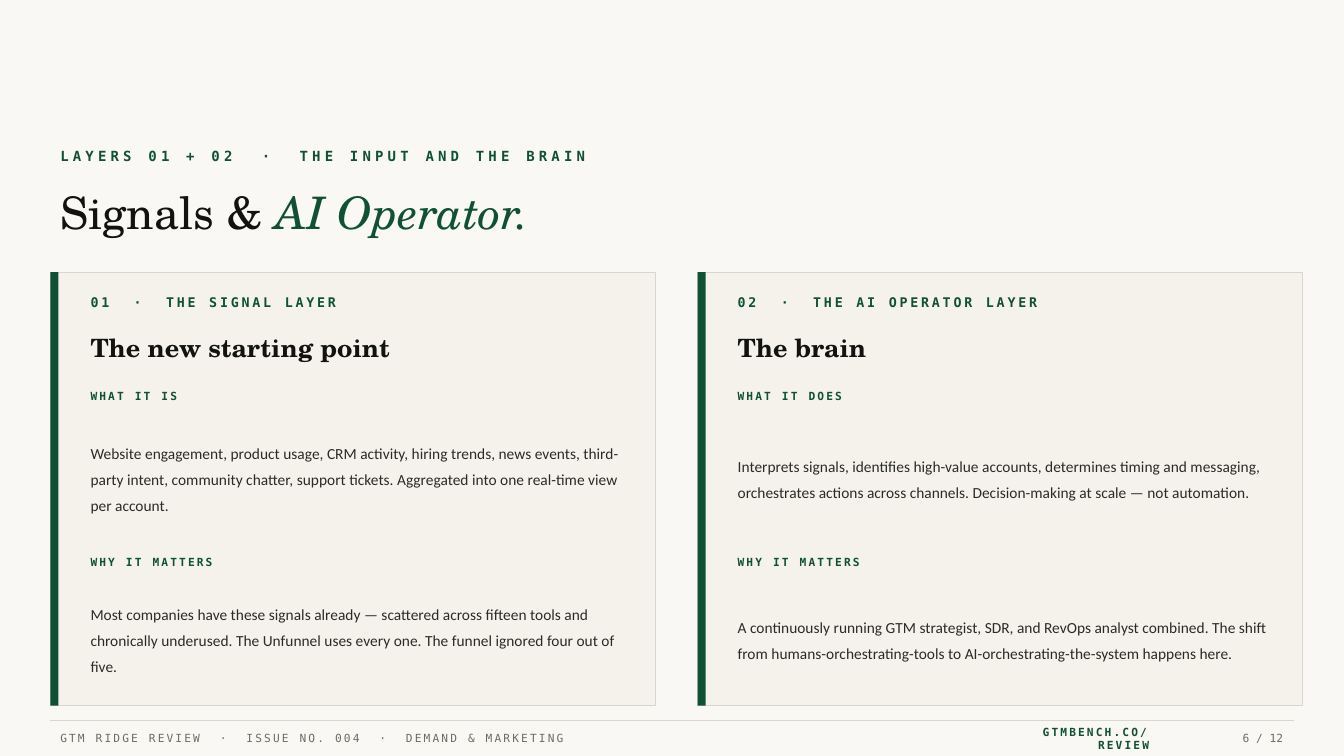
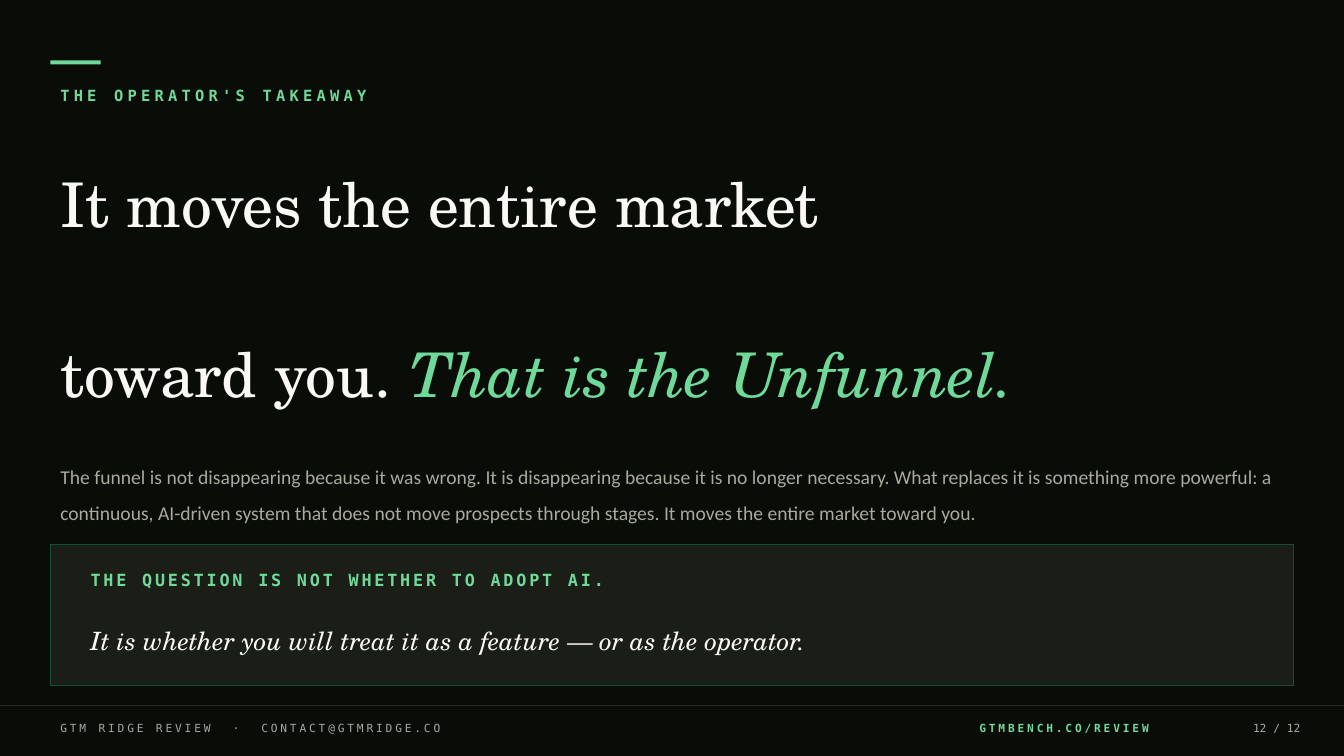
import pptx
import pptx.dml.color
import pptx.enum.shapes
import pptx.enum.text
import pptx.util
from lxml import etree

Pt = pptx.util.Pt
hex_color = pptx.dml.color.RGBColor.from_string
ANCHOR = pptx.enum.text.MSO_ANCHOR
ALIGN = pptx.enum.text.PP_ALIGN

PAPER, NIGHT = "FAF8F4", "0A0C08"
INK, BODY, MUTED, SILVER = "12130F", "2A2B25", "6B6D63", "A8AA9E"
GREEN, MINT = "0F5132", "6FD99A"
CARD, RULE, PANEL = "F5F2EC", "D9D6CF", "1B1D17"
SERIF, SANS, MONO = "TeX Gyre Schola", "Calibri", "DejaVu Sans Mono"

WIDTH, HEIGHT = 960, 540
MARGIN = 36
INDENT = 21.6
CONTENT = WIDTH - 2 * MARGIN


def write(page, place, text, *, title=False, font=MONO, size=8, color=GREEN, bold=False,
          italic=False, tracking=0, align=ALIGN.LEFT, anchor=ANCHOR.MIDDLE,
          line_spacing=1.0, gap=0, accent="", accent_color=GREEN):
    """Fill the title or a new text box; an italic accent may end the last paragraph."""
    if title:
        box = page.shapes.title
        box.left, box.top, box.width, box.height = map(Pt, place)
    else:
        box = page.shapes.add_textbox(*map(Pt, place))
    frame = box.text_frame
    frame.word_wrap = True
    frame.auto_size = pptx.enum.text.MSO_AUTO_SIZE.NONE
    frame.vertical_anchor = anchor
    lines = text.split("\n")
    for index, line in enumerate(lines):
        para = frame.add_paragraph() if index else frame.paragraphs[0]
        para.alignment = align
        para.line_spacing = line_spacing
        para.space_before = Pt(gap if index else 0)
        pieces = [(line, color, italic)]
        if accent and index == len(lines) - 1:
            pieces.append((accent, accent_color, True))
        for words, tint, slanted in pieces:
            span = para.add_run()
            span.text = words
            span.font.name = font
            span.font.size = Pt(size)
            span.font.bold = bold
            span.font.italic = slanted
            span.font.color.rgb = hex_color(tint)
            if tracking:
                span._r.get_or_add_rPr().set("spc", str(int(tracking * 100)))


def add_block(page, place, fill, line=None, line_width=0.5):
    block = page.shapes.add_shape(pptx.enum.shapes.MSO_SHAPE.RECTANGLE, *map(Pt, place))
    block.shadow.inherit = False
    block.fill.solid()
    block.fill.fore_color.rgb = hex_color(fill)
    if line:
        block.line.color.rgb = hex_color(line)
        block.line.width = Pt(line_width)
    else:
        block.line.fill.background()


deck = pptx.Presentation()
deck.slide_width, deck.slide_height = Pt(WIDTH), Pt(HEIGHT)
title_only = deck.slide_layouts.get_by_name("Title Only")
pages = []
for background in (PAPER, NIGHT):
    page = deck.slides.add_slide(title_only)
    page.background.fill.solid()
    page.background.fill.fore_color.rgb = hex_color(background)
    pages.append(page)
layers_page, takeaway_page = pages

# Layers: kicker and title
write(layers_page, (MARGIN, 100.8, 864, 21.6), "LAYERS 01 + 02  ·  THE INPUT AND THE BRAIN",
      size=10, bold=True, tracking=3)
write(layers_page, (MARGIN, 126, 885.6, 50.4), "Signals & ", title=True, font=SERIF, size=32,
      color=INK, accent="AI Operator.")

# Layers: one card per layer
cards = [
    ("01  ·  THE SIGNAL LAYER", "The new starting point", "WHAT IT IS",
     "Website engagement, product usage, CRM activity, hiring trends, news events, "
     "third-party intent, community chatter, support tickets. Aggregated into one "
     "real-time view per account.",
     "Most companies have these signals already — scattered across fifteen tools and "
     "chronically underused. The Unfunnel uses every one. The funnel ignored four out of five."),
    ("02  ·  THE AI OPERATOR LAYER", "The brain", "WHAT IT DOES",
     "Interprets signals, identifies high-value accounts, determines timing and messaging, "
     "orchestrates actions across channels. Decision-making at scale — not automation.",
     "A continuously running GTM strategist, SDR, and RevOps analyst combined. The shift "
     "from humans-orchestrating-tools to AI-orchestrating-the-system happens here."),
]
CARD_TOP, CARD_WIDTH, CARD_HEIGHT, CARD_STEP = 194.4, 432, 309.6, 462.24
TEXT_WIDTH = 396
for index, (label, heading, what, what_text, why_text) in enumerate(cards):
    left = MARGIN + index * CARD_STEP
    text_left = left + INDENT
    add_block(layers_page, (left, CARD_TOP, CARD_WIDTH, CARD_HEIGHT), CARD, RULE)
    add_block(layers_page, (left, CARD_TOP, 5.76, CARD_HEIGHT), GREEN)
    write(layers_page, (text_left, 205.2, TEXT_WIDTH, 21.6), label, size=9.5, bold=True,
          tracking=2)
    write(layers_page, (text_left, 230.4, TEXT_WIDTH, 36), heading, font=SERIF, size=18,
          color=INK, bold=True)
    sections = [(what, what_text, 273.6, 93.6), ("WHY IT MATTERS", why_text, 392.4, 86.4)]
    for section, detail, top, height in sections:
        write(layers_page, (text_left, top, TEXT_WIDTH, 18), section, bold=True, tracking=1.5)
        write(layers_page, (text_left, top + 19.44, TEXT_WIDTH, height), detail, font=SANS,
              size=11, color=BODY, line_spacing=1.4)

# Takeaway: statement
add_block(takeaway_page, (MARGIN, 43.2, 36, 2.88), MINT)
write(takeaway_page, (MARGIN, 57.6, 864, 21.6), "THE OPERATOR'S TAKEAWAY", size=11, color=MINT,
      bold=True, tracking=3)
write(takeaway_page, (MARGIN, 107.3, 885.6, 172.8), "It moves the entire market\ntoward you. ",
      title=True, font=SERIF, size=44, color=PAPER, anchor=ANCHOR.TOP, line_spacing=1.15,
      gap=60.7, accent="That is the Unfunnel.", accent_color=MINT)
write(takeaway_page, (MARGIN, 295.2, 885.6, 108),
      "The funnel is not disappearing because it was wrong. It is disappearing because it is "
      "no longer necessary. What replaces it is something more powerful: a continuous, "
      "AI-driven system that does not move prospects through stages. It moves the entire "
      "market toward you.", font=SANS, size=14, color=SILVER, line_spacing=1.5)

# Takeaway: closing question
add_block(takeaway_page, (MARGIN, 388.8, CONTENT, 100.8), PANEL, GREEN, 1)
write(takeaway_page, (MARGIN + INDENT, 399.6, 828, 28.8),
      "THE QUESTION IS NOT WHETHER TO ADOPT AI.", size=12, color=MINT, bold=True, tracking=2)
write(takeaway_page, (MARGIN + INDENT, 432, 828, 50.4),
      "It is whether you will treat it as a feature — or as the operator.", font=SERIF, size=18,
      color=PAPER, italic=True)

# Footers: rule, issue line, address and page number
footers = [
    dict(page=layers_page, rule=(MARGIN, WIDTH - MARGIN, 514.8), rule_color=RULE, top=518.4,
         text="GTM RIDGE REVIEW  ·  ISSUE NO. 004  ·  DEMAND & MARKETING", color=MUTED,
         tracking=1.5, address=(720, 108), address_color=GREEN, number="6 / 12",
         number_place=(828, 95.76)),
    dict(page=takeaway_page, rule=(0, WIDTH, 504), rule_color=BODY, top=511.2,
         text="GTM RIDGE REVIEW  ·  CONTACT@GTMRIDGE.CO", color=SILVER,
         tracking=2, address=(576, 252), address_color=MINT, number="12 / 12",
         number_place=(842.4, 93.6)),
]
for footer in footers:
    page, top = footer["page"], footer["top"]
    start, end, level = map(Pt, footer["rule"])
    rule = page.shapes.add_connector(pptx.enum.shapes.MSO_CONNECTOR.STRAIGHT,
                                     start, level, end, level)
    rule.line.color.rgb = hex_color(footer["rule_color"])
    rule.line.width = Pt(0.75)
    etree.SubElement(rule._element.spPr, pptx.oxml.ns.qn("a:effectLst"))
    write(page, (MARGIN, top, 576, 18), footer["text"], color=footer["color"],
          tracking=footer["tracking"])
    left, width = footer["number_place"]
    write(page, (left, top, width, 18), footer["number"], color=footer["color"],
          align=ALIGN.RIGHT)
    left, width = footer["address"]
    write(page, (left, top, width, 18), "GTMBENCH.CO/REVIEW", color=footer["address_color"],
          bold=True, tracking=footer["tracking"], align=ALIGN.RIGHT)

deck.save("out.pptx")
